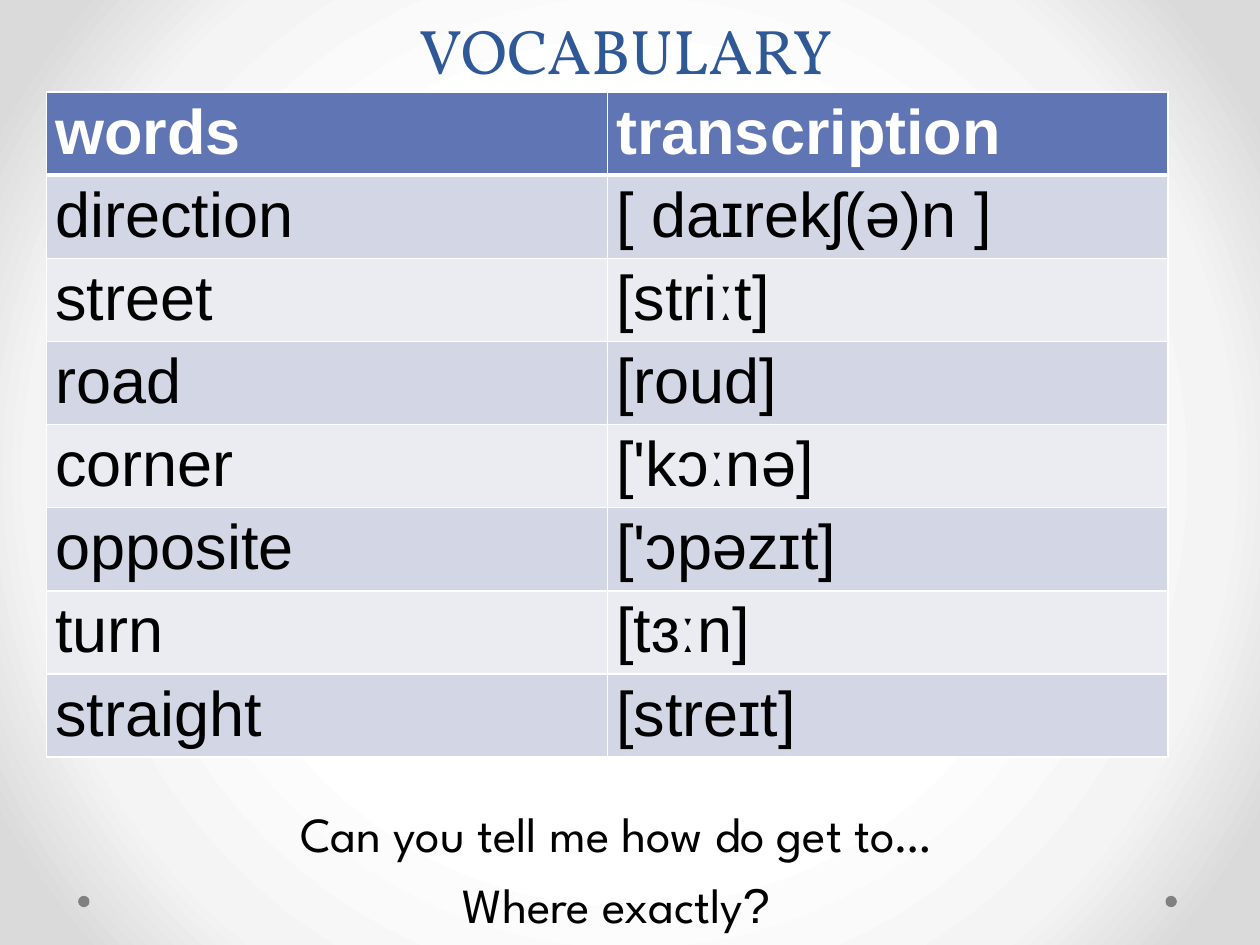
from dataclasses import dataclass

from lxml import etree
from pptx import Presentation
from pptx.dml.color import RGBColor
from pptx.enum.shapes import MSO_SHAPE
from pptx.enum.text import MSO_ANCHOR, MSO_AUTO_SIZE, PP_ALIGN
from pptx.oxml import parse_xml
from pptx.oxml.ns import nsdecls, qn
from pptx.util import Inches, Pt

CENTER = PP_ALIGN.CENTER
BOTTOM = MSO_ANCHOR.BOTTOM
MIDDLE_DOT = MSO_SHAPE.OVAL
NO_AUTOFIT = MSO_AUTO_SIZE.NONE
TITLE_ONLY = 5

SLIDE_W, SLIDE_H = Inches(10), Inches(7.5)


@dataclass(frozen=True)
class Theme:
    title_font: str = "Vollkorn"
    table_font: str = "Arial"
    phrase_font: str = "League Spartan"
    large: int = 36
    medium: int = 28
    title: str = "2F5897"
    ink: str = "000000"
    paper: str = "FFFFFF"
    header: str = "6076B4"
    bands: tuple = ("D2D6E5", "EAECF2")
    dot: str = "808080"
    glow: tuple = ((50, "FFFFFF"), (76, "F4F4F4"), (92, "DADADA"))


THEME = Theme()

VOCABULARY = [
    ("words", "transcription"),
    ("direction", "[ daɪrekʃ(ə)n ]"),
    ("street", "[striːt]"),
    ("road", "[roud]"),
    ("corner", "['kɔːnə]"),
    ("opposite", "['ɔpəzɪt]"),
    ("turn", "[tɜːn]"),
    ("straight", "[streɪt]"),
]

# Each phrase is a list of (text, font) runs
PHRASES = [
    [("Can you tell me how do get to…", THEME.phrase_font)],
    [("Where exactly", THEME.phrase_font), ("?", THEME.table_font)],
]


def across(percent):
    return int(SLIDE_W * percent / 100)


def down(percent):
    return int(SLIDE_H * percent / 100)


def area(left, top, width, height):
    """Turn percentages of the slide into a position and a size."""
    return across(left), down(top), across(width), down(height)


def add_run(paragraph, text, font, size, color, bold=False):
    run = paragraph.add_run()
    run.text = text
    run.font.name = font
    run.font.size = Pt(size)
    run.font.bold = bold
    run.font.color.rgb = RGBColor.from_string(color)


def paint_background(slide):
    """Radial glow that darkens towards the corners."""
    slide.background.fill.solid()
    stops = "".join(
        f'<a:gs pos="{share * 1000}"><a:srgbClr val="{color}"/></a:gs>'
        for share, color in THEME.glow)
    glow = parse_xml(
        f'<a:gradFill {nsdecls("a")} rotWithShape="1"><a:gsLst>{stops}</a:gsLst>'
        '<a:path path="circle">'
        '<a:fillToRect l="50000" t="50000" r="50000" b="50000"/>'
        '</a:path></a:gradFill>')
    properties = slide.element.find(".//" + qn("p:bgPr"))
    properties.replace(properties[0], glow)


def add_dot(slide, left):
    diameter = across(0.9)
    dot = slide.shapes.add_shape(
        MIDDLE_DOT, across(left), down(94.8), diameter, diameter)
    dot.shadow.inherit = False
    dot.fill.solid()
    dot.fill.fore_color.rgb = RGBColor.from_string(THEME.dot)
    dot.line.fill.background()


def write_title(slide, text):
    heading = slide.shapes.title
    heading.left, heading.top, heading.width, heading.height = area(
        18.4, 3.33, 62.5, 13.07)
    frame = heading.text_frame
    frame.auto_size = NO_AUTOFIT
    frame.vertical_anchor = BOTTOM
    paragraph = frame.paragraphs[0]
    paragraph.alignment = CENTER
    paragraph.line_spacing = Pt(35)
    add_run(paragraph, text, THEME.title_font, THEME.large, THEME.title)
    paragraph.add_line_break()


def border_cell(cell, bottom_width):
    properties = cell._tc.get_or_add_tcPr()
    widths = {"a:lnL": 1, "a:lnR": 1, "a:lnT": 1, "a:lnB": bottom_width}
    for side, width in widths.items():
        line = etree.SubElement(properties, qn(side), w=str(Pt(width)))
        fill = etree.SubElement(line, qn("a:solidFill"))
        etree.SubElement(fill, qn("a:srgbClr"), val=THEME.paper)


def write_cell(cell, text, fill, color, is_header):
    border_cell(cell, 3 if is_header else 1)
    cell.fill.solid()
    cell.fill.fore_color.rgb = RGBColor.from_string(fill)
    cell.margin_left = cell.margin_right = Inches(0.07)
    cell.margin_top = cell.margin_bottom = Inches(0.04)
    add_run(cell.text_frame.paragraphs[0], text, THEME.table_font,
            THEME.large, color, is_header)


def add_vocabulary(slide, entries):
    row_share = 8.8
    table = slide.shapes.add_table(
        len(entries), len(entries[0]),
        *area(3.7, 9.73, 89, row_share * len(entries))).table
    for row, entry in enumerate(entries):
        is_header = row == 0
        fill = THEME.header if is_header else THEME.bands[(row - 1) % 2]
        color = THEME.paper if is_header else THEME.ink
        for column, text in enumerate(entry):
            write_cell(table.cell(row, column), text, fill, color, is_header)


def add_phrases(slide, phrases):
    frame = slide.shapes.add_textbox(*area(5.2, 84.4, 87.4, 18.67)).text_frame
    frame.word_wrap = True
    for index, runs in enumerate(phrases):
        paragraph = frame.add_paragraph() if index else frame.paragraphs[0]
        paragraph.alignment = CENTER
        paragraph.space_before = Pt(7)
        for text, font in runs:
            add_run(paragraph, text, font, THEME.medium, THEME.ink)


def main():
    deck = Presentation()
    deck.slide_width, deck.slide_height = SLIDE_W, SLIDE_H
    slide = deck.slides.add_slide(deck.slide_layouts[TITLE_ONLY])

    # Backdrop
    paint_background(slide)
    for left in (92.5, 6.2):
        add_dot(slide, left)

    # Content
    write_title(slide, "VOCABULARY")
    add_vocabulary(slide, VOCABULARY)
    add_phrases(slide, PHRASES)

    deck.save("out.pptx")


if __name__ == "__main__":
    main()
